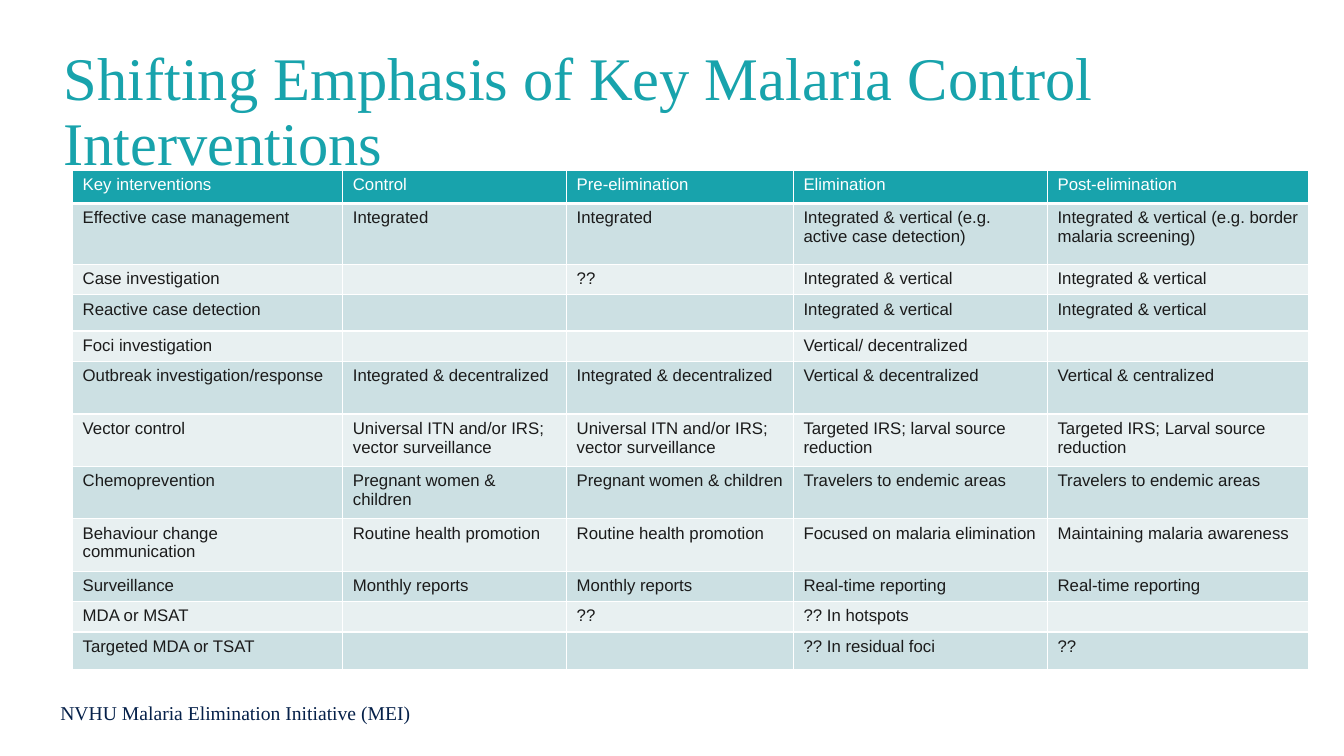
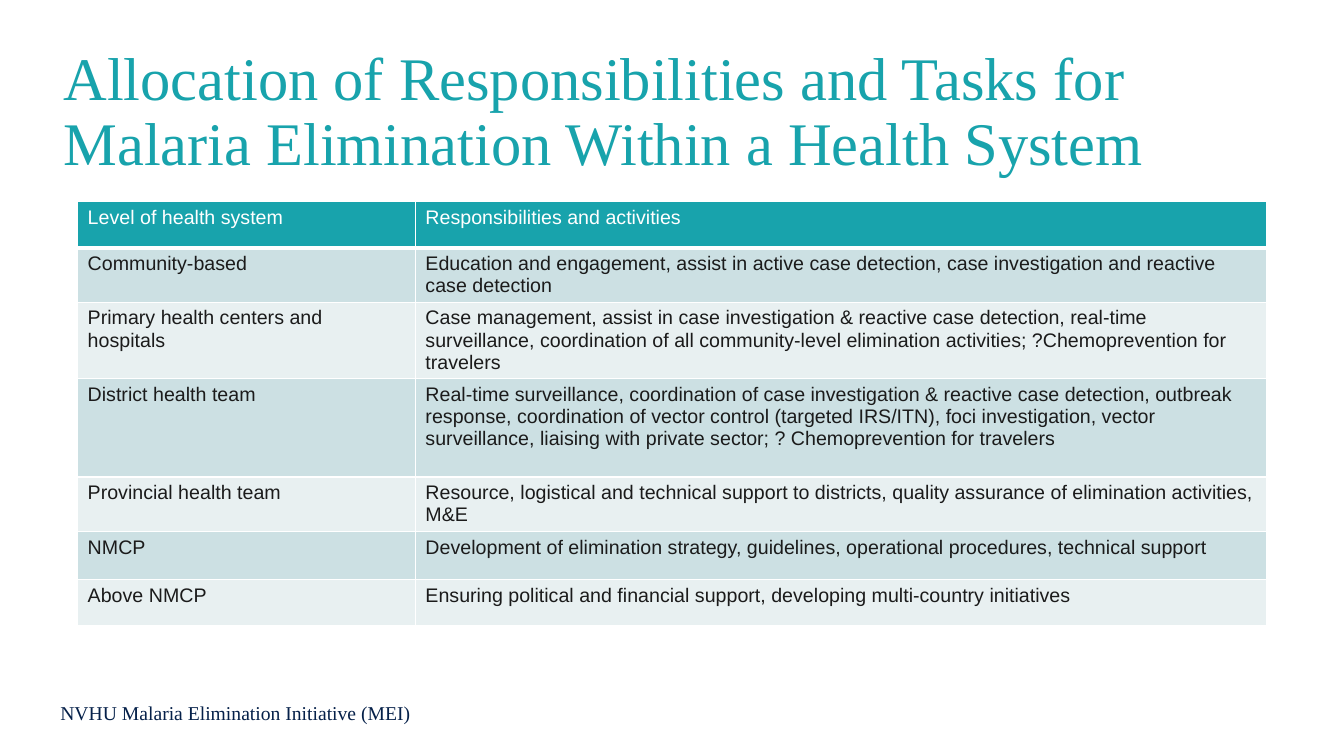
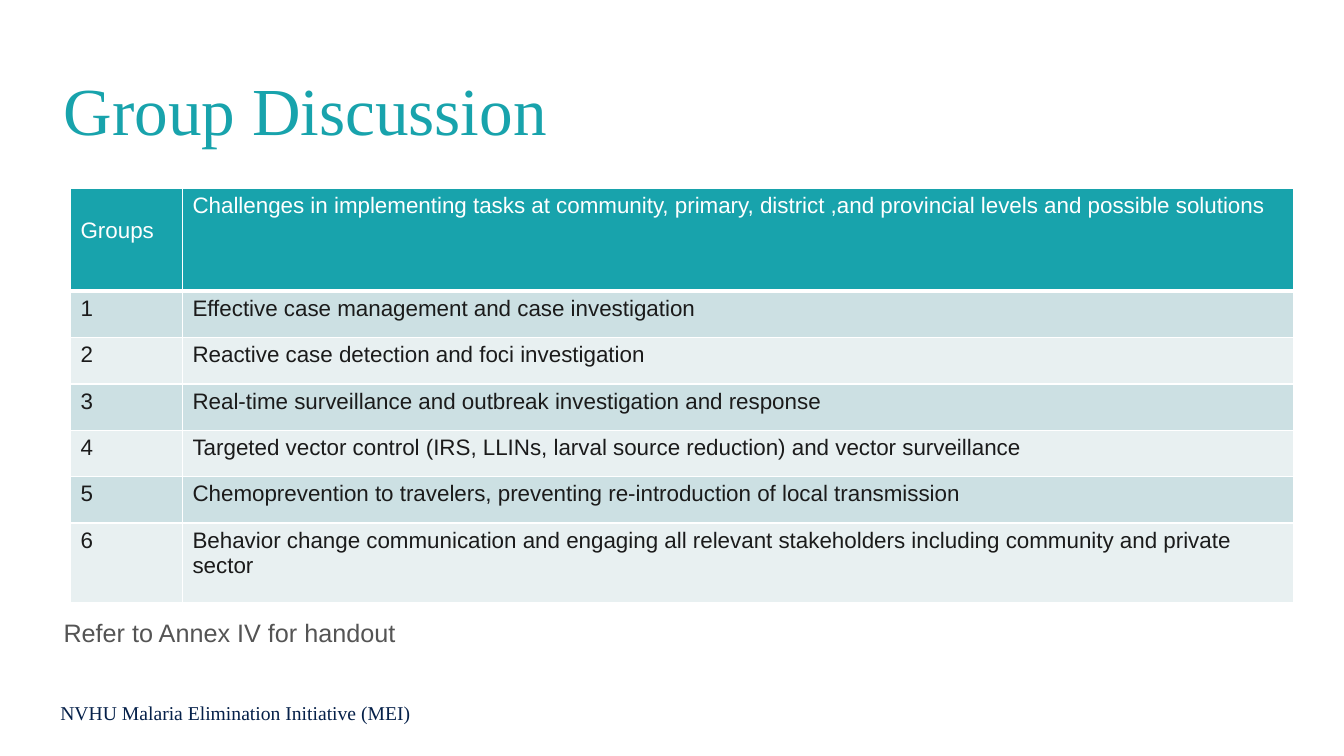
from lxml.etree import SubElement
from pptx import Presentation
from pptx.dml.color import RGBColor
from pptx.enum.text import MSO_ANCHOR as Anchor, MSO_AUTO_SIZE as AutoSize, PP_ALIGN as Align
from pptx.oxml.ns import qn
from pptx.util import Inches, Pt

TEAL = RGBColor(0x18, 0xA3, 0xAC)
NAVY = RGBColor(0x05, 0x20, 0x49)
INK = RGBColor(0x1B, 0x1B, 0x1B)
GRAY = RGBColor(0x54, 0x54, 0x54)
WHITE = RGBColor(0xFF, 0xFF, 0xFF)
BANDS = (RGBColor(0xE8, 0xF0, 0xF1), RGBColor(0xCC, 0xE0, 0xE3))
SERIF, SANS = "Times New Roman", "Arial"
TITLE_ONLY, TITLE_AND_BODY = 5, 1
FOOTER = "NVHU Malaria Elimination Initiative (MEI)"

INTERVENTIONS = [
    ("Key interventions", "Control", "Pre-elimination", "Elimination", "Post-elimination"),
    ("Effective case management", "Integrated", "Integrated",
     "Integrated & vertical (e.g. active case detection)",
     "Integrated & vertical (e.g. border malaria screening)"),
    ("Case investigation", "", "??", "Integrated & vertical", "Integrated & vertical"),
    ("Reactive case detection", "", "", "Integrated & vertical", "Integrated & vertical"),
    ("Foci investigation", "", "", "Vertical/ decentralized", ""),
    ("Outbreak investigation/response", "Integrated & decentralized",
     "Integrated & decentralized", "Vertical & decentralized", "Vertical & centralized"),
    ("Vector control", "Universal ITN and/or IRS; vector surveillance",
     "Universal ITN and/or IRS;\nvector surveillance",
     "Targeted IRS; larval source reduction", "Targeted IRS; Larval source reduction"),
    ("Chemoprevention", "Pregnant women & children", "Pregnant women & children",
     "Travelers to endemic areas", "Travelers to endemic areas"),
    ("Behaviour change communication", "Routine health promotion", "Routine health promotion",
     "Focused on malaria elimination", "Maintaining malaria awareness"),
    ("Surveillance", "Monthly reports", "Monthly reports",
     "Real-time reporting", "Real-time reporting"),
    ("MDA or MSAT", "", "??", "?? In hotspots", ""),
    ("Targeted MDA or TSAT", "", "", "?? In residual foci", "??"),
]

RESPONSIBILITIES = [
    ("Level of health system", "Responsibilities and activities"),
    ("Community-based",
     "Education and engagement, assist in active case detection, case investigation "
     "and reactive case detection"),
    ("Primary health centers and hospitals",
     "Case management, assist in case investigation & reactive case detection, real-time "
     "surveillance, coordination of all community-level elimination activities; "
     "?Chemoprevention for travelers"),
    ("District health team",
     "Real-time surveillance, coordination of case investigation & reactive case detection, "
     "outbreak response, coordination of vector control (targeted IRS/ITN), foci "
     "investigation, vector surveillance, liaising with private sector; "
     "? Chemoprevention for travelers"),
    ("Provincial health team",
     "Resource, logistical and technical support to districts, quality assurance of "
     "elimination activities, M&E"),
    ("NMCP",
     "Development of elimination strategy, guidelines, operational procedures, "
     "technical support"),
    ("Above NMCP",
     "Ensuring political and financial support, developing multi-country initiatives"),
]

CHALLENGES = [
    "Effective case management and case investigation",
    "Reactive case detection and foci investigation",
    "Real-time surveillance and outbreak investigation and response",
    "Targeted vector control (IRS, LLINs, larval source reduction) and vector surveillance",
    "Chemoprevention to travelers, preventing re-introduction of local transmission",
    "Behavior change communication and engaging all relevant stakeholders including "
    "community and private sector",
]
GROUPS = [
    ("Groups", "Challenges in implementing tasks at community, primary, district ,and "
               "provincial levels and possible solutions"),
    *((str(number), challenge) for number, challenge in enumerate(CHALLENGES, 1)),
]


class Deck:
    def __init__(self):
        self.deck = Presentation()
        self.deck.slide_width, self.deck.slide_height = Inches(13.33), Inches(7.5)
        self.page = None

    def add_page(self, layout, title, size):
        self.page = self.deck.slides.add_slide(self.deck.slide_layouts[layout])
        footer = self.page.shapes.add_textbox(0, 0, 0, 0)
        self.place(footer, 0.5, 6.9, 5.31, 0.34)
        self.set_text(footer.text_frame, FOOTER, name=SERIF, size=Pt(14), color=NAVY)
        heading = self.page.shapes.title
        self.place(heading, 0.53, 0.4, 12.45, 1.45)
        heading.text_frame.vertical_anchor = Anchor.MIDDLE
        self.set_text(heading.text_frame, title, spacing=0.9, name=SERIF, size=Pt(size),
                      color=TEAL)

    def place(self, shape, left, top, width, height):
        frame = {"left": left, "top": top, "width": width, "height": height}
        for name, value in frame.items():
            setattr(shape, name, Inches(value))
        shape.text_frame.word_wrap = True
        shape.text_frame.auto_size = AutoSize.NONE

    def set_text(self, frame, text, spacing=1.0, color=INK, **style):
        frame.text = text
        for para in frame.paragraphs:
            para.alignment = Align.LEFT
            para.line_spacing = spacing
            for span in para.runs:
                span.font.color.rgb = color
                for name, value in {"bold": False, **style}.items():
                    setattr(span.font, name, value)
            if not para.runs:
                size = str(int(style["size"].pt * 100))
                SubElement(para._p, qn("a:endParaRPr"), sz=size)

    def add_note(self, text):
        note = self.page.placeholders[1]
        self.place(note, 0.53, 6, 12.45, 0.6)
        note.text_frame.vertical_anchor = Anchor.MIDDLE
        self.set_text(note.text_frame, text, spacing=0.8, name=SANS, size=Pt(18), color=GRAY)
        properties = note.text_frame.paragraphs[0]._p.get_or_add_pPr()
        properties.set("marL", "0")
        properties.set("indent", "0")
        SubElement(properties, qn("a:buNone"))

    def add_borders(self, cell, bottom):
        properties = cell._tc.get_or_add_tcPr()
        for side, width in {"L": 1, "R": 1, "T": 1, "B": bottom}.items():
            line = SubElement(properties, qn(f"a:ln{side}"), w=str(Pt(width)))
            fill = SubElement(line, qn("a:solidFill"))
            SubElement(fill, qn("a:srgbClr"), val=str(WHITE))

    def add_table(self, left, top, widths, heights, rows, size):
        table = self.page.shapes.add_table(
            len(rows), len(widths), Inches(left), Inches(top),
            Inches(sum(widths)), Inches(sum(heights))).table
        for column, width in zip(table.columns, widths):
            column.width = Inches(width)
        for index, (row, height, texts) in enumerate(zip(table.rows, heights, rows)):
            row.height = Inches(height)
            header = index == 0
            for cell, text in zip(row.cells, texts):
                self.add_borders(cell, 3 if header else 1)
                cell.fill.solid()
                cell.fill.fore_color.rgb = TEAL if header else BANDS[index % 2]
                self.set_text(cell.text_frame, text, name=SANS, size=Pt(size),
                              color=WHITE if header else INK)
        return table


def main():
    deck = Deck()

    deck.add_page(TITLE_ONLY, "Shifting Emphasis of Key Malaria Control Interventions", 43.2)
    deck.add_table(0.72, 1.69, [2.68, 2.22, 2.25, 2.52, 2.59],
                   [0.33, 0.6, 0.3, 0.36, 0.3, *[0.52] * 4, 0.3, 0.3, 0.37],
                   INTERVENTIONS, 12)

    deck.add_page(TITLE_ONLY, "Allocation of Responsibilities and Tasks for Malaria "
                              "Elimination Within a Health System", 43.2)
    deck.add_table(0.77, 2, [3.35, 8.44], [0.46, 0.46, 0.65, 0.98, 0.44, 0.48, 0.46],
                   RESPONSIBILITIES, 14)

    deck.add_page(TITLE_AND_BODY, "Group Discussion", 48)
    deck.add_note("Refer to Annex IV for handout")
    groups = deck.add_table(0.7, 1.87, [1.11, 11.02], [1.02, *[0.46] * 5, 0.79], GROUPS, 16)
    groups.cell(0, 0).margin_top = Inches(0.3)

    deck.deck.save("out.pptx")


if __name__ == "__main__":
    main()
